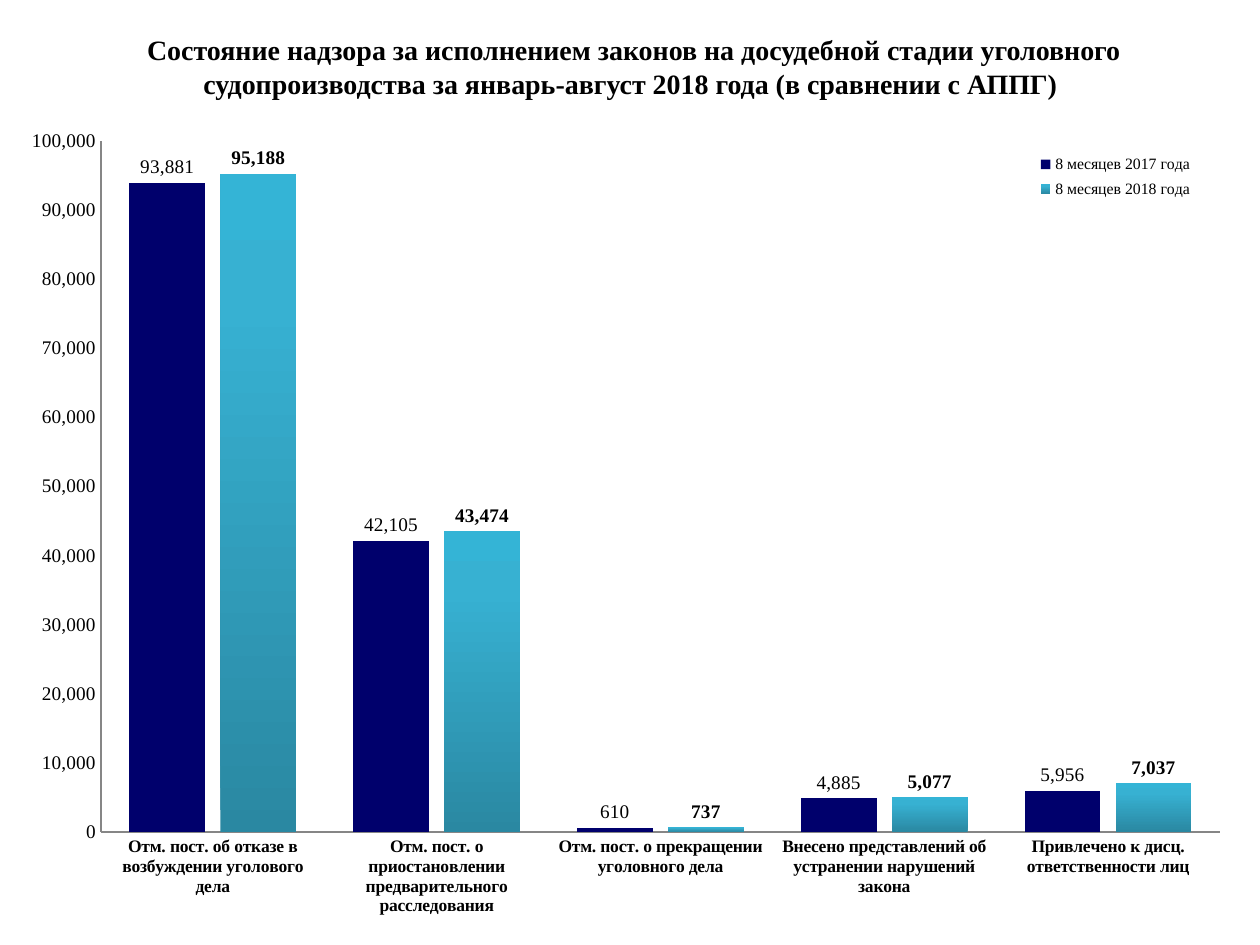
"""Build the slide on supervision of pre-trial criminal proceedings."""
from copy import deepcopy
from dataclasses import dataclass
from typing import Optional

from lxml.etree import SubElement
from pptx import Presentation
from pptx.chart.data import CategoryChartData
from pptx.dml.color import RGBColor as RGB
from pptx.enum.chart import XL_CHART_TYPE as CT, XL_LABEL_POSITION as LP
from pptx.enum.chart import XL_LEGEND_POSITION as LegendPos, XL_TICK_MARK as Tick
from pptx.enum.text import MSO_ANCHOR as Anchor, MSO_AUTO_SIZE as AutoSize, PP_ALIGN as Align
from pptx.oxml.ns import qn
from pptx.util import Cm, Pt

FONT = "Times New Roman"
COLORS = {"text": "000000", "axis": "868686", "navy": "00006C",
          "deep": "2A88A2", "mid": "37B1D2", "light": "34B4D6"}
TITLE = ("Состояние надзора за исполнением законов на досудебной стадии уголовного "
         "судопроизводства за январь-август 2018 года (в сравнении с АППГ) ")
CATEGORIES = ["Отм. пост. об отказе в возбуждении уголового дела",
              "Отм. пост. о приостановлении предварительного расследования",
              "Отм. пост. о прекращении уголовного дела",
              "Внесено представлений об устранении нарушений закона",
              "Привлечено к дисц. ответственности лиц"]
NUMBER_FORMAT = "#,##0"


@dataclass(frozen=True)
class Period:
    name: str
    values: tuple[int, ...]
    bold: bool
    color: Optional[str] = None
    stops: tuple[tuple[int, str], ...] = ()


PERIODS = [
    Period("8 месяцев 2017 года", (93881, 42105, 610, 4885, 5956), False, color="navy"),
    Period("8 месяцев 2018 года", (95188, 43474, 737, 5077, 7037), True,
           stops=((0, "deep"), (80, "mid"), (100, "light"))),
]


def color(name: str) -> RGB:
    """Return a named colour."""
    return RGB.from_string(COLORS[name])


def set_font(font, size: float, bold: bool = False) -> None:
    """Apply the slide's typeface."""
    font.name, font.size, font.bold = FONT, Pt(size), bold
    font.color.rgb = color("text")


def set_layout(parent, before: str, x: float, y: float, w: float, h: float, inner: bool = False) -> None:
    """Place a chart part by fractions of the chart area."""
    for old in parent.findall(qn("c:layout")):
        parent.remove(old)
    layout = SubElement(parent, qn("c:layout"))
    parent.find(qn(before)).addprevious(layout)
    manual = SubElement(layout, qn("c:manualLayout"))
    target = [("layoutTarget", "inner")] if inner else []
    modes = [("xMode", "edge"), ("yMode", "edge")]
    for tag, val in target + modes + [("x", x), ("y", y), ("w", w), ("h", h)]:
        SubElement(manual, qn(f"c:{tag}")).set("val", str(val))


def fill_series(series, period: Period) -> None:
    """Fill the columns with a solid colour or an upward gradient."""
    fill = series.format.fill
    if period.color:
        fill.solid()
        fill.fore_color.rgb = color(period.color)
        return
    fill.gradient()
    fill.gradient_angle = 90
    stops = series.format.fill.gradient_stops
    stop_list = series._element.find(".//" + qn("a:gsLst"))
    stop_list.append(deepcopy(stop_list[-1]))
    stops = fill.gradient_stops
    for stop, (position, name) in zip(stops, period.stops):
        stop.position = position / 100
        stop.color.rgb = color(name)


def format_series(series, period: Period) -> None:
    """Format the columns and value labels of a period."""
    fill_series(series, period)
    series.invert_if_negative = False
    labels = series.data_labels
    labels.show_value = True
    labels.number_format, labels.number_format_is_linked = NUMBER_FORMAT, False
    labels.position = LP.OUTSIDE_END
    set_font(labels.font, 11, period.bold)


def format_axis(axis, size: float, bold: bool = False) -> None:
    """Format the line and labels of an axis."""
    axis.has_major_gridlines = False
    axis.major_tick_mark = axis.minor_tick_mark = Tick.NONE
    axis.format.line.color.rgb = color("axis")
    axis.format.line.width = Pt(0.75)
    set_font(axis.tick_labels.font, size, bold)


def add_title(slide) -> None:
    """Write the slide title."""
    sp = slide.shapes.title
    sp.left, sp.top, sp.width, sp.height = Cm(1.35), Cm(0.56), Cm(22.86), Cm(1.55)
    tf = sp.text_frame
    tf.word_wrap, tf.auto_size, tf.vertical_anchor = True, AutoSize.NONE, Anchor.MIDDLE
    p = tf.paragraphs[0]
    p.alignment = Align.CENTER
    r = p.add_run()
    r.text = TITLE
    set_font(r.font, 16, True)


def add_columns(slide) -> None:
    """Add the chart comparing both periods."""
    data = CategoryChartData(number_format=NUMBER_FORMAT)
    data.categories = CATEGORIES
    for period in PERIODS:
        data.add_series(period.name, period.values)
    chart = slide.shapes.add_chart(CT.COLUMN_CLUSTERED, Cm(0.3), Cm(2.51),
                                   Cm(24.79), Cm(16.21), data).chart
    chart.has_title = False
    set_font(chart.font, 11)
    plot = chart.plots[0]
    plot.gap_width, plot.overlap, plot.vary_by_categories = 75, -20, False
    for series, period in zip(plot.series, PERIODS):
        format_series(series, period)
    format_axis(chart.category_axis, 10, True)
    axis = chart.value_axis
    format_axis(axis, 11)
    axis.minimum_scale, axis.maximum_scale, axis.major_unit = 0, 100000, 10000
    axis.tick_labels.number_format = NUMBER_FORMAT
    axis.tick_labels.number_format_is_linked = False
    chart.has_legend = True
    legend = chart.legend
    legend.position, legend.include_in_layout = LegendPos.BOTTOM, False
    set_font(legend.font, 9)
    set_layout(legend._element, "c:overlay", 0.82, 0.03, 0.15, 0.07)
    plot_area = chart._chartSpace.find(".//" + qn("c:plotArea"))
    set_layout(plot_area, "c:barChart", 0.07, 0.02, 0.91, 0.86, inner=True)


def main() -> None:
    """Build and save the presentation."""
    prs = Presentation()
    prs.slide_width, prs.slide_height = Cm(25.4), Cm(19.05)
    slide = prs.slides.add_slide(prs.slide_layouts[5])
    add_title(slide)
    add_columns(slide)
    prs.save("out.pptx")


if __name__ == "__main__":
    main()
